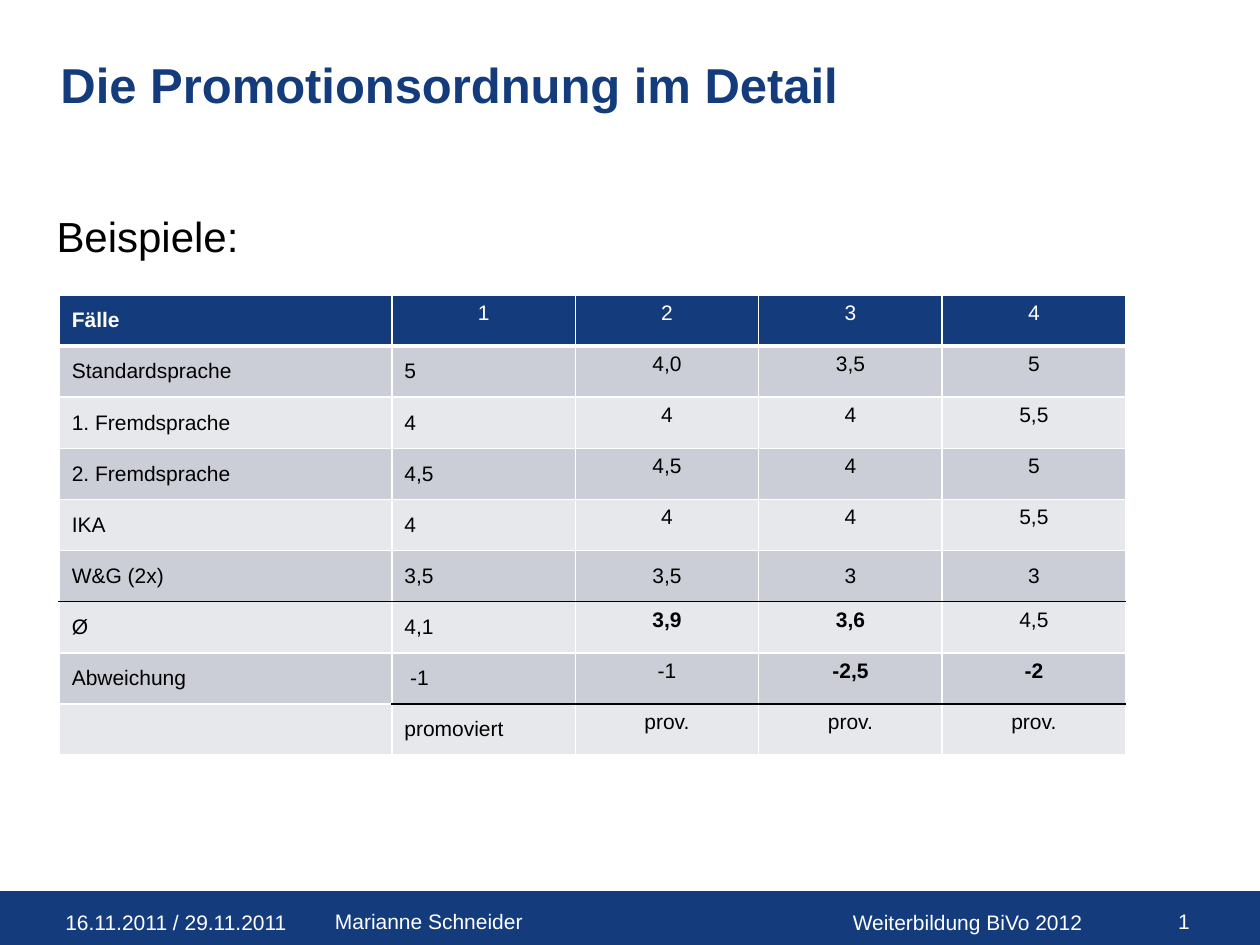
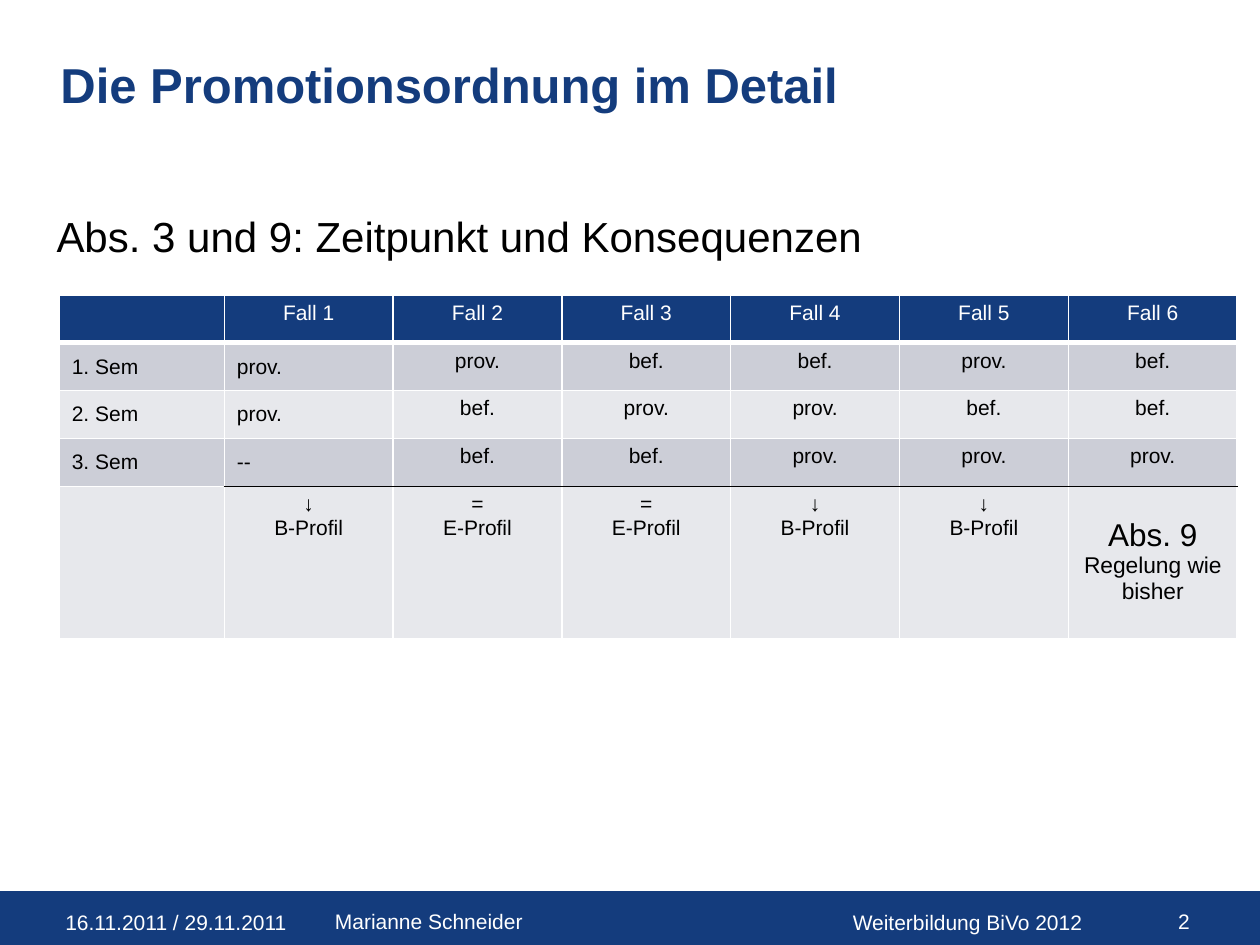
from collections import namedtuple
from itertools import product

from lxml import etree
from pptx import Presentation, util as u
from pptx.dml.color import RGBColor
from pptx.enum import shapes, text
from pptx.oxml import ns

COLORS = {"navy": "143C7D", "white": "FFFFFF", "black": "000000",
          "dark_band": "CCCED7", "light_band": "E7E8EC"}
FONT = "Arial"
GRID_COLS, GRID_ROWS = 100, 75
LEFT, CENTER, RIGHT = (text.PP_ALIGN.LEFT, text.PP_ALIGN.CENTER,
                       text.PP_ALIGN.RIGHT)
TOP, MIDDLE = text.MSO_ANCHOR.TOP, text.MSO_ANCHOR.MIDDLE

Box = namedtuple("Box", "x y w h")
TITLE_BOX = Box(3.8, 3.8, 73, 9.3)
SUBTITLE_BOX = Box(3.5, 16.2, 91.1, 6)
FOOTER_BOX = Box(0, 70.8, 100, 4.2)

prs = Presentation()
prs.slide_width, prs.slide_height = u.Inches(10), u.Inches(7.5)


def across(cols):
    return int(prs.slide_width * cols / GRID_COLS)


def down(rows):
    return int(prs.slide_height * rows / GRID_ROWS)


def place(box):
    return across(box.x), down(box.y), across(box.w), down(box.h)


def rgb(name):
    return RGBColor.from_string(COLORS[name])


def write(p, content, size=12, color="black", bold=False, align=LEFT):
    p.alignment = align
    r = p.add_run()
    r.text = content
    r.font.name, r.font.size, r.font.bold = FONT, u.Pt(size), bold
    r.font.color.rgb = rgb(color)
    return r


def add_text(s, box, content, **fmt):
    sp = s.shapes.add_textbox(*place(box))
    sp.text_frame.word_wrap = True
    return write(sp.text_frame.paragraphs[0], content, **fmt)


def make_slide_number(r):
    fld = etree.Element(ns.qn("a:fld"), type="slidenum",
                        id="{B6F15528-21DE-4FAA-801E-634DDDAF4B2B}")
    r._r.addprevious(fld)
    fld.extend(list(r._r))
    r._r.getparent().remove(r._r)


def add_footer(s, box, number):
    band = s.shapes.add_shape(shapes.MSO_SHAPE.RECTANGLE, *place(box))
    band.shadow.inherit = False
    band.fill.solid()
    band.fill.fore_color.rgb = rgb("navy")
    band.line.color.rgb = rgb("navy")
    band.line.width = u.Pt(0.75)
    parts = [("16.11.2011 / 29.11.2011", 4.2, 0.9, 19.8),
             ("Marianne Schneider", 25.6, 0.8, 37.8),
             ("Weiterbildung BiVo 2012", 66.7, 0.9, 23.3)]
    for content, x, y, w in parts:
        add_text(s, Box(box.x + x, box.y + y, w, 3.2), content, color="white")
    r = add_text(s, Box(box.x + 90, box.y + 0.8, 5.4, 3.2), str(number),
                 color="white", align=RIGHT)
    make_slide_number(r)


def set_border(cell, side, color, width):
    ln = etree.SubElement(cell._tc.get_or_add_tcPr(), ns.qn(f"a:ln{side}"),
                          w=str(u.Pt(width)))
    fill = etree.SubElement(ln, ns.qn("a:solidFill"))
    etree.SubElement(fill, ns.qn("a:srgbClr"), val=COLORS[color])


def style_cell(cell, row, col, rules):
    def edge(above):
        if above == 0:
            return "white", 3
        ruled = above in rules and col >= rules[above]
        return ("black" if ruled else "white"), 1

    borders = {"L": ("white", 1), "R": ("white", 1),
               "T": edge(row - 1), "B": edge(row)}
    for side, line in borders.items():
        set_border(cell, side, *line)
    band = "dark_band" if row % 2 else "light_band"
    cell.fill.solid()
    cell.fill.fore_color.rgb = rgb(band if row else "navy")


def fill_cell(cell, content, row, col, bold):
    if not content:
        cell.margin_top = cell.margin_bottom = 0
        return
    left = col == 0 or (col == 1 and row > 0 and "\n" not in content)
    cell.vertical_anchor = MIDDLE if left else TOP
    tf = cell.text_frame
    for i, line in enumerate(content.split("\n")):
        p = tf.add_paragraph() if i else tf.paragraphs[0]
        write(p, line, color="black" if row else "white", bold=bold,
              align=LEFT if left else CENTER)


def add_grade_table(s, x, y, widths, heights, rows, rules, bold=()):
    box = Box(x, y, sum(widths), sum(heights))
    frame = s.shapes.add_table(len(heights), len(widths), *place(box))
    table = frame.table
    for column, w in zip(table.columns, widths):
        column.width = across(w)
    for line, h in zip(table.rows, heights):
        line.height = down(h)
    for row, col in product(range(len(heights)), range(len(widths))):
        cell = table.cell(row, col)
        style_cell(cell, row, col, rules)
        fill_cell(cell, rows[row][col], row, col, (row, col) in bold)
    return table


def add_detail_slide(subtitle, number):
    s = prs.slides.add_slide(prs.slide_layouts[5])
    add_footer(s, FOOTER_BOX, number)
    title = s.shapes.title
    title.left, title.top, title.width, title.height = place(TITLE_BOX)
    tf = title.text_frame
    tf.vertical_anchor, tf.word_wrap = TOP, True
    write(tf.paragraphs[0], "Die Promotionsordnung im Detail", size=28,
          color="navy", bold=True)
    add_text(s, SUBTITLE_BOX, subtitle, size=24)
    return s


def build_examples():
    s = add_detail_slide("Beispiele:", 5)
    rows = [["Fälle", "1", "2", "3", "4"],
            ["Standardsprache", "5", "4,0", "3,5", "5"],
            ["1. Fremdsprache", "4", "4", "4", "5,5"],
            ["2. Fremdsprache", "4,5", "4,5", "4", "5"],
            ["IKA", "4", "4", "4", "5,5"],
            ["W&G (2x)", "3,5", "3,5", "3", "3"],
            ["Ø", "4,1", "3,9", "3,6", "4,5"],
            ["Abweichung", " -1", "-1", "-2,5", "-2"],
            ["", "promoviert", "prov.", "prov.", "prov."]]
    table = add_grade_table(
        s, 4.7, 23.4, [26.4] + [14.56] * 4, [4.06] * len(rows), rows,
        rules={5: 0, 7: 1}, bold={(0, 0), (6, 2), (6, 3), (7, 3), (7, 4)})
    for cell in table.rows[5].cells:
        cell.vertical_anchor = MIDDLE


def build_consequences():
    s = add_detail_slide("Abs. 3 und 9: Zeitpunkt und Konsequenzen", 6)
    lower, keep = "↓\nB-Profil", "=\nE-Profil"
    rows = [[""] + [f"Fall {n}" for n in range(1, 7)],
            ["1. Sem", "prov.", "prov.", "bef.", "bef.", "prov.", "bef."],
            ["2. Sem", "prov.", "bef.", "prov.", "prov.", "bef.", "bef."],
            ["3. Sem", "--", "bef.", "bef.", "prov.", "prov.", "prov."],
            ["", lower, keep, keep, lower, lower, ""]]
    table = add_grade_table(s, 4.7, 23.4, [13.1] + [13.4] * 6,
                            [3.8] * 4 + [12.1], rows, rules={3: 1})
    cell = table.cell(4, 6)
    cell.margin_top = down(2.5)
    tf = cell.text_frame
    write(tf.paragraphs[0], "Abs. 9", size=18, align=CENTER)
    write(tf.add_paragraph(), "Regelung wie bisher", size=13, align=CENTER)


def main():
    build_examples()
    build_consequences()
    prs.save("out.pptx")


if __name__ == "__main__":
    main()
